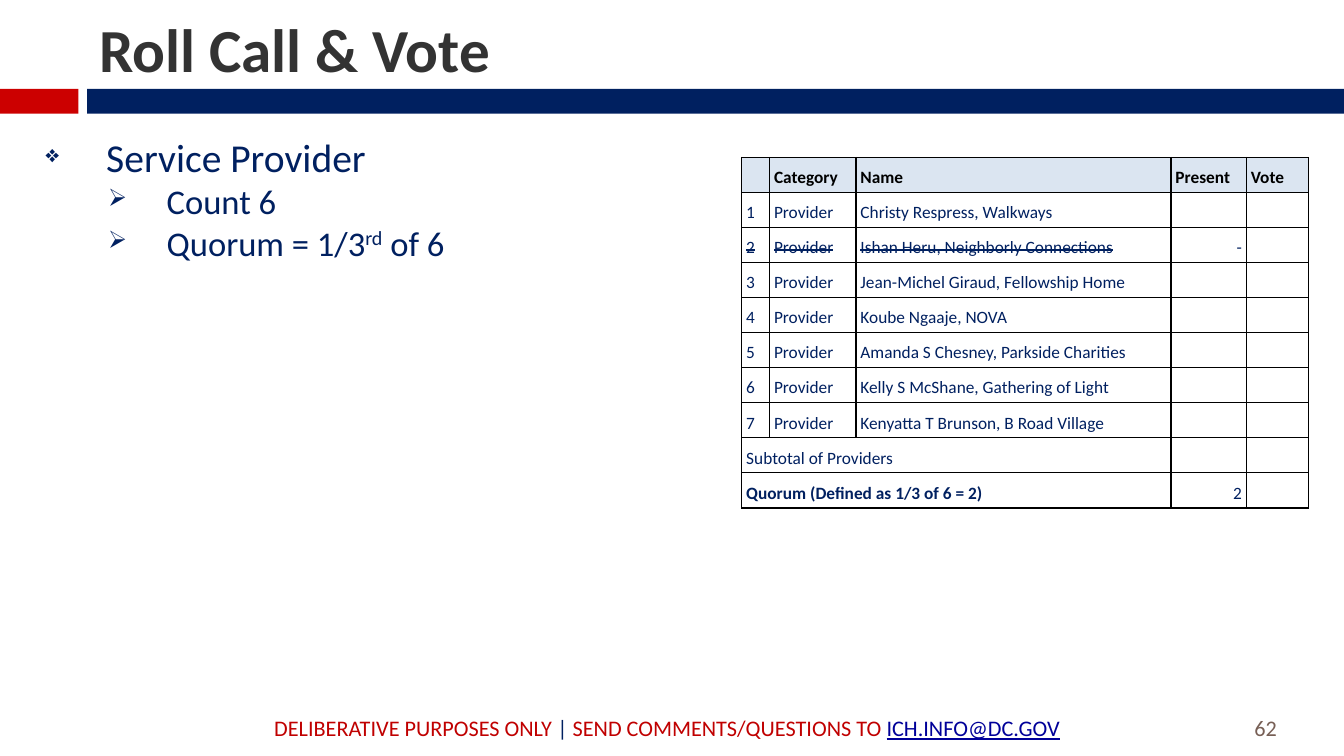
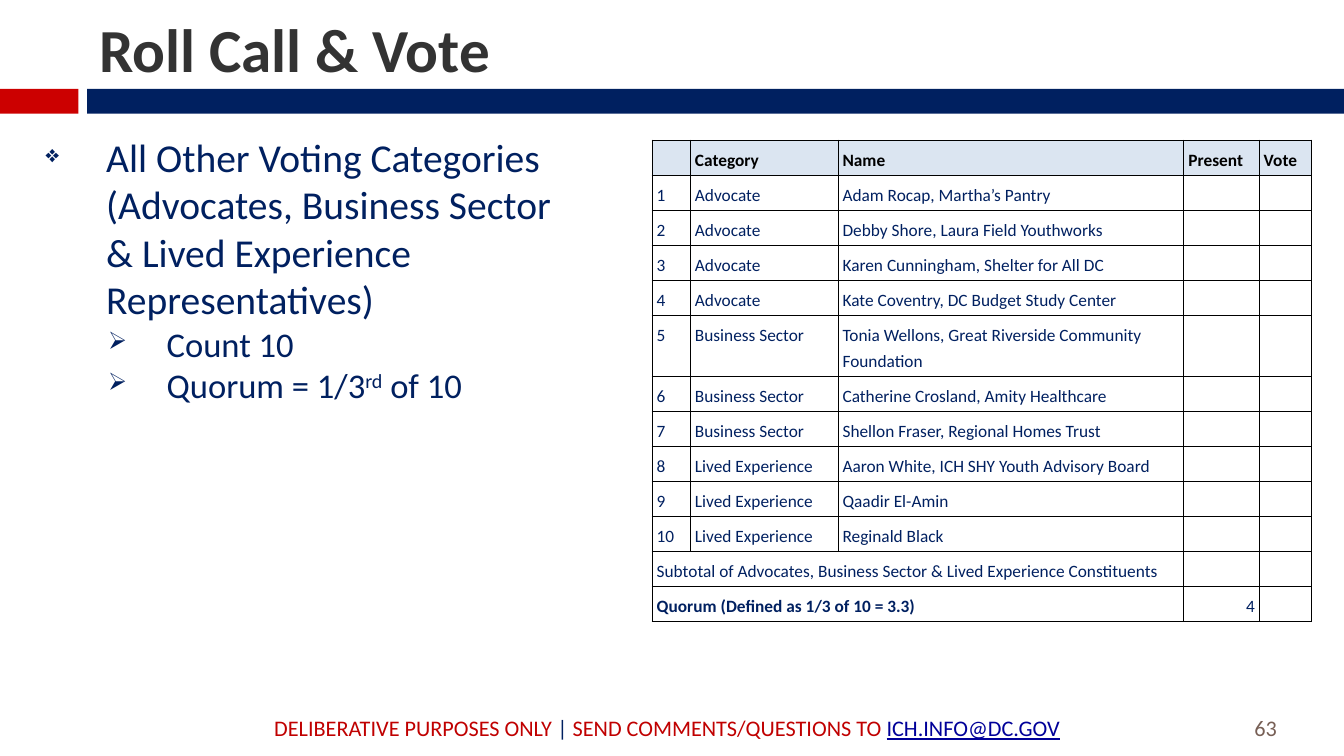
from dataclasses import dataclass

from lxml.etree import SubElement
from pptx import Presentation
from pptx.dml.color import RGBColor
from pptx.enum.shapes import MSO_SHAPE
from pptx.enum.text import MSO_ANCHOR, PP_ALIGN
from pptx.oxml.ns import qn
from pptx.util import Pt


@dataclass(frozen=True)
class Theme:
    font: str = "Calibri"
    navy: str = "002060"
    red: str = "CC0000"
    notice: str = "C00000"
    address: str = "000099"
    heading: str = "333333"
    number: str = "775F55"
    black: str = "000000"
    white: str = "FFFFFF"
    header: str = "DBE5F1"
    title_size: float = 49.5
    topic_size: float = 32
    detail_size: float = 28
    footer_size: float = 18
    table_size: float = 14


theme = Theme()


def write(paragraph, text, size, color=theme.navy, bold=False, underline=False,
          strike=False, baseline=0, align=PP_ALIGN.LEFT):
    paragraph.alignment = align
    run = paragraph.add_run()
    run.text = text
    run.font.name = theme.font
    run.font.size = Pt(size)
    run.font.bold = bold
    run.font.underline = underline
    run.font.color.rgb = RGBColor.from_string(color)
    properties = run._r.get_or_add_rPr()
    if strike:
        properties.set("strike", "sngStrike")
    if baseline:
        properties.set("baseline", str(baseline * 1000))


def add_frame(slide, left, top, width, height, anchor=MSO_ANCHOR.TOP, wrap=True):
    frame = slide.shapes.add_textbox(Pt(left), Pt(top), Pt(width), Pt(height)).text_frame
    frame.word_wrap = wrap
    frame.vertical_anchor = anchor
    frame.margin_left = frame.margin_right = Pt(8)
    frame.margin_top = frame.margin_bottom = Pt(4)
    return frame


bands = [(0, 63.5, theme.red), (70.5, 1017.5, theme.navy)]
footer_parts = [
    ("DELIBERATIVE PURPOSES ONLY ", theme.notice, False),
    ("| ", theme.navy, False),
    ("SEND COMMENTS/QUESTIONS TO ", theme.notice, False),
    ("ICH.INFO@DC.GOV", theme.address, True),
]
headings = ["", "Category", "Name", "Present", "Vote"]
row_height = 28.4

roll_calls = [
    {
        "number": "62",
        "topic": "Service Provider",
        "count": "6",
        "topic_width": 543.5,
        "table_at": (600.5, 127.5),
        "columns": [22.5, 70, 255, 61, 50.5],
        "members": [
            ("Provider", "Christy Respress, Walkways"),
            ("Provider", "Ishan Heru, Neighborly Connections"),
            ("Provider", "Jean-Michel Giraud, Fellowship Home"),
            ("Provider", "Koube Ngaaje, NOVA"),
            ("Provider", "Amanda S Chesney, Parkside Charities"),
            ("Provider", "Kelly S McShane, Gathering of Light"),
            ("Provider", "Kenyatta T Brunson, B Road Village"),
        ],
        "struck": 2,
        "subtotal": "Subtotal of Providers",
        "quorum": "Quorum (Defined as 1/3 of 6 = 2)",
        "needed": "2",
    },
    {
        "number": "63",
        "topic": "All Other Voting Categories (Advocates, Business Sector "
                 "& Lived Experience Representatives)",
        "count": "10",
        "topic_width": 426,
        "table_at": (528, 113.5),
        "columns": [31, 119.5, 280, 61, 42],
        "members": [
            ("Advocate", "Adam Rocap, Martha’s Pantry"),
            ("Advocate", "Debby Shore, Laura Field Youthworks"),
            ("Advocate", "Karen Cunningham, Shelter for All DC"),
            ("Advocate", "Kate Coventry, DC Budget Study Center"),
            ("Business Sector", "Tonia Wellons, Great Riverside Community Foundation"),
            ("Business Sector", "Catherine Crosland, Amity Healthcare"),
            ("Business Sector", "Shellon Fraser, Regional Homes Trust"),
            ("Lived Experience", "Aaron White, ICH SHY Youth Advisory Board"),
            ("Lived Experience", "Qaadir El-Amin"),
            ("Lived Experience", "Reginald Black"),
        ],
        "struck": None,
        "subtotal": "Subtotal of Advocates, Business Sector & Lived Experience Constituents",
        "quorum": "Quorum (Defined as 1/3 of 10 = 3.3)",
        "needed": "4",
    },
]

deck = Presentation()
deck.slide_width = Pt(1088)
deck.slide_height = Pt(612)

for call in roll_calls:
    slide = deck.slides.add_slide(deck.slide_layouts[6])

    for left, width, color in bands:
        band = slide.shapes.add_shape(MSO_SHAPE.RECTANGLE, Pt(left), Pt(72), Pt(width), Pt(20))
        band.shadow.inherit = False
        band.fill.solid()
        band.fill.fore_color.rgb = RGBColor.from_string(color)
        band.line.fill.background()

    title = add_frame(slide, 72.5, 7, 885, 65.5, anchor=MSO_ANCHOR.BOTTOM)
    write(title.paragraphs[0], "Roll Call & Vote", theme.title_size,
          color=theme.heading, bold=True)

    footer = add_frame(slide, 214, 574.5, 678, 29, anchor=MSO_ANCHOR.MIDDLE)
    for text, color, underline in footer_parts:
        write(footer.paragraphs[0], text, theme.footer_size, color=color, underline=underline)

    page_number = add_frame(slide, 1007.5, 571.5, 54, 32.5, anchor=MSO_ANCHOR.BOTTOM)
    write(page_number.paragraphs[0], call["number"], theme.footer_size, color=theme.number)

    summary = add_frame(slide, 29, 103.5, call["topic_width"], 440.5)
    topic = summary.paragraphs[0]
    count = summary.add_paragraph()
    quorum = summary.add_paragraph()
    for paragraph, level, margin, hanging, percent, mark in [
        (topic, 0, 49, 49, 60, "❖"),
        (count, 1, 98, 47.5, 70, "➢"),
        (quorum, 1, 98, 47.5, 70, "➢"),
    ]:
        paragraph.level = level
        properties = paragraph._p.get_or_add_pPr()
        properties.set("marL", str(Pt(margin)))
        properties.set("indent", str(-Pt(hanging)))
        SubElement(properties, qn("a:buSzPct"), val=str(percent * 1000))
        SubElement(properties, qn("a:buChar"), char=mark)
    write(topic, call["topic"], theme.topic_size)
    write(count, f"Count {call['count']}", theme.detail_size)
    write(quorum, "Quorum = 1/3", theme.detail_size)
    write(quorum, "rd", theme.detail_size, baseline=30)
    write(quorum, f" of {call['count']}", theme.detail_size)

    rows = [headings]
    for position, (category, name) in enumerate(call["members"], 1):
        present = "-" if position == call["struck"] else ""
        rows.append([str(position), category, name, present, ""])
    rows.append([call["subtotal"], "", "", "", ""])
    rows.append([call["quorum"], "", "", call["needed"], ""])
    last = len(rows) - 1

    left, top = call["table_at"]
    roster = slide.shapes.add_table(
        len(rows), len(headings), Pt(left), Pt(top),
        Pt(sum(call["columns"])), Pt(row_height * len(rows))).table
    roster.horz_banding = False
    for column, width in zip(roster.columns, call["columns"]):
        column.width = Pt(width)
    for row in roster.rows:
        row.height = Pt(row_height)
    for total_row in (last - 1, last):
        roster.cell(total_row, 0).merge(roster.cell(total_row, 2))

    for r, values in enumerate(rows):
        for c, value in enumerate(values):
            cell = roster.cell(r, c)
            cell.margin_left = cell.margin_right = Pt(3.6)
            cell.margin_top = cell.margin_bottom = Pt(3.6)
            for side in ("a:lnL", "a:lnR", "a:lnT", "a:lnB"):
                border = SubElement(cell._tc.get_or_add_tcPr(), qn(side), w=str(Pt(1)))
                SubElement(SubElement(border, qn("a:solidFill")), qn("a:srgbClr"),
                           val=theme.black)
            cell.fill.solid()
            cell.fill.fore_color.rgb = RGBColor.from_string(
                theme.header if r == 0 else theme.white)
            paragraph = cell.text_frame.paragraphs[0]
            paragraph.line_spacing = 1.25
            if value:
                write(paragraph, value, theme.table_size,
                      color=theme.black if r == 0 else theme.navy,
                      bold=r == 0 or (r == last and c == 0),
                      strike=r == call["struck"] and c < 3,
                      align=PP_ALIGN.RIGHT if r and c == 3 else PP_ALIGN.LEFT)
            else:
                SubElement(paragraph._p, qn("a:endParaRPr"), sz=str(theme.table_size * 100))

deck.save("out.pptx")
